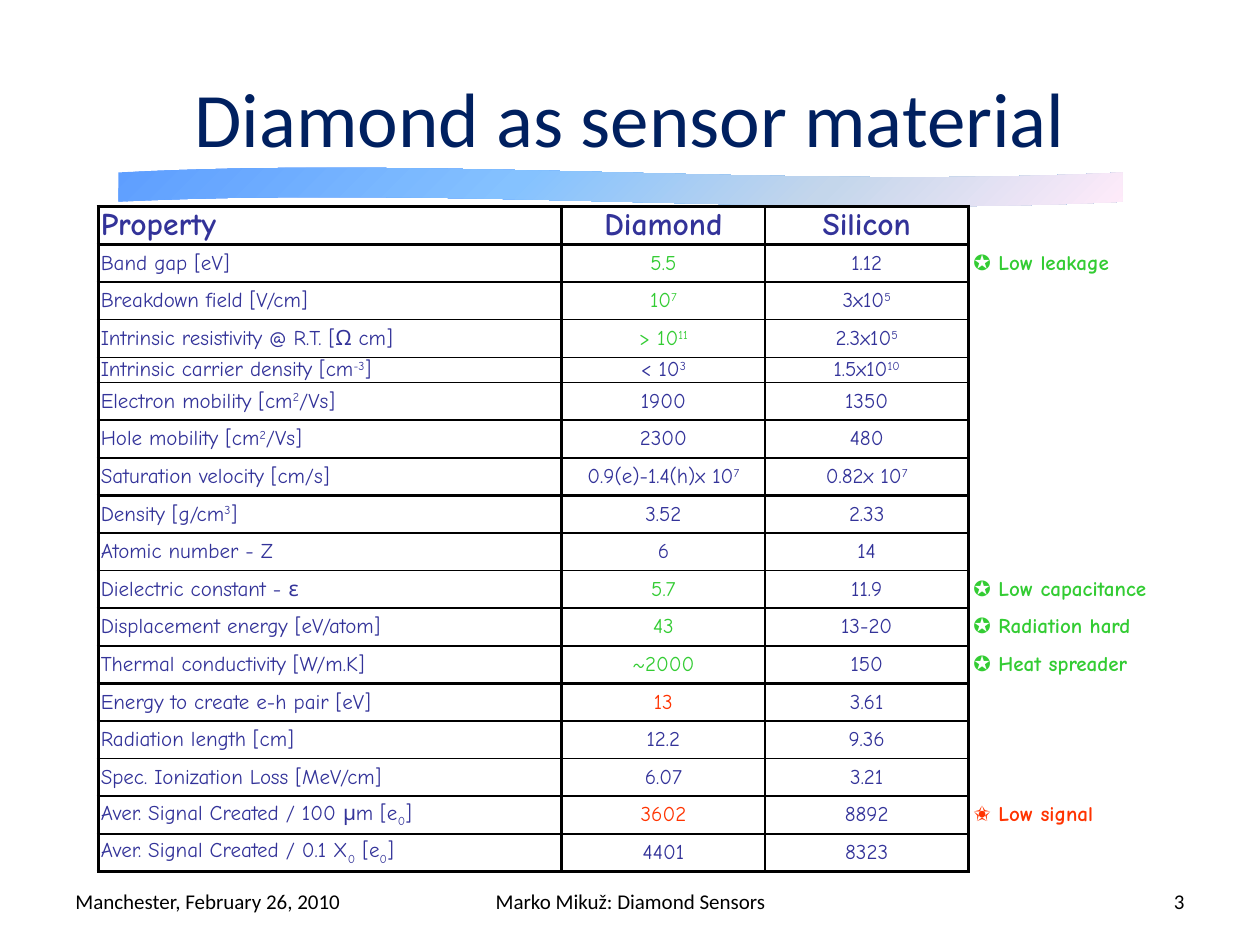
from dataclasses import dataclass

from lxml.etree import SubElement
from pptx import Presentation
from pptx.dml.color import RGBColor
from pptx.enum.shapes import MSO_SHAPE as Shape
from pptx.enum.text import MSO_ANCHOR as Anchor, PP_ALIGN as Align
from pptx.oxml import parse_xml
from pptx.oxml.ns import nsdecls, qn
from pptx.util import Inches, Pt


@dataclass(frozen=True)
class Theme:
    """Fonts, colours and type sizes of the slide."""
    font: str = "Calibri"
    table_font: str = "Comic Neue"
    title: str = "002060"
    footer: str = "000000"
    line: str = "000000"
    ink: str = "333399"
    good: str = "33CC33"
    bad: str = "FF3300"
    title_size: int = 44
    header_size: int = 18
    body_size: int = 12
    thick: float = 2.25
    thin: float = 1
    wave: tuple = ((0, "5E9EFF"), (40, "85C2FF"), (70, "C4D6EB"), (100, "FFEBFA"))


T = Theme()
WIDTH, HEIGHT = Inches(10), Inches(7.5)
NO_STYLE = "{2D5ABB26-0587-4C30-8999-92F81FD0307C}"
BASELINES = {"^": "30000", "_": "-25000"}

COLUMN_WEIGHTS = (2.28, 1, 1, 1)
SHORT_ROW, SHORT_WEIGHT = 4, 0.67
THICK_ROW_EDGES = (0, 1, 8, 13, 18)
THIN_COLUMN_EDGE = 2
NOTE_COLUMN = 3
CELL_INSETS = (0.02, 0, 0, 0.04)

ROWS = (
    ("Property", "Diamond", "Silicon", T.ink, ""),
    ("Band gap [eV]", "5.5", "1.12", T.good, "✪ Low leakage"),
    ("Breakdown field [V/cm]", "10|^7", "3x10|^5", T.good, ""),
    ("Intrinsic resistivity @ R.T. [Ω cm]", "> 10|^11", "2.3x10|^5", T.good, ""),
    ("Intrinsic carrier density [cm|^-3|]", "< 10|^3", "1.5x10|^10", T.ink, ""),
    ("Electron mobility [cm|^2|/Vs]", "1900", "1350", T.ink, ""),
    ("Hole mobility [cm|^2|/Vs]", "2300", "480", T.ink, ""),
    ("Saturation velocity [cm/s]", "0.9(e)-1.4(h)x 10|^7", "0.82x 10|^7", T.ink, ""),
    ("Density [g/cm|^3|]", "3.52", "2.33", T.ink, ""),
    ("Atomic number - Z", "6", "14", T.ink, ""),
    ("Dielectric constant - ε", "5.7", "11.9", T.good, "✪ Low capacitance"),
    ("Displacement energy [eV/atom]", "43", "13-20", T.good, "✪ Radiation hard"),
    ("Thermal conductivity [W/m.K]", "~2000", "150", T.good, "✪ Heat spreader"),
    ("Energy to create e-h pair [eV]", "13", "3.61", T.bad, ""),
    ("Radiation length [cm]", "12.2", "9.36", T.ink, ""),
    ("Spec. Ionization Loss [MeV/cm]", "6.07", "3.21", T.ink, ""),
    ("Aver. Signal Created / 100 μm [e|_0|]", "3602", "8892", T.bad, "✬ Low signal"),
    ("Aver. Signal Created / 0.1 X|_0| [e|_0|]", "4401", "8323", T.ink, ""),
)


def box(x, y, w, h):
    """Turn percentages of the slide into left, top, width and height."""
    return (int(WIDTH * x / 100), int(HEIGHT * y / 100),
            int(WIDTH * w / 100), int(HEIGHT * h / 100))


def style_run(r, font, size, color, bold=False):
    """Format one run."""
    r.font.name, r.font.size, r.font.bold = font, Pt(size), bold
    r.font.color.rgb = RGBColor.from_string(color)


def write(tf, text, align, size, color):
    """Set one plain line, centred vertically."""
    tf.text = text
    tf.word_wrap = True
    tf.vertical_anchor = Anchor.MIDDLE
    p = tf.paragraphs[0]
    p.alignment = align
    style_run(p.runs[0], T.font, size, color)


def add_title(s, text):
    """Place and fill the title."""
    sp = s.shapes.title
    sp.left, sp.top, sp.width, sp.height = box(5, 4, 90, 16.67)
    write(sp.text_frame, text, Align.CENTER, T.title_size, T.title)


def add_footer(s, text, x, w, align):
    """Add one footer text."""
    sp = s.shapes.add_textbox(*box(x, 92.67, w, 5.33))
    write(sp.text_frame, text, align, T.body_size, T.footer)


def add_wave(s):
    """Add the gradient wave behind everything else."""
    sp = s.shapes.add_shape(Shape.WAVE, *box(9.4, 17.73, 79.7, 4.13))
    sp.shadow.inherit = False
    sp.line.fill.background()
    stops = "".join(f'<a:gs pos="{pos * 1000}"><a:srgbClr val="{color}"/></a:gs>'
                    for pos, color in T.wave)
    sp.fill.background()
    no_fill = sp._element.spPr.find(qn("a:noFill"))
    no_fill.getparent().replace(no_fill, parse_xml(
        f'<a:gradFill {nsdecls("a")} rotWithShape="1"><a:gsLst>{stops}</a:gsLst>'
        '<a:lin ang="2700000" scaled="0"/></a:gradFill>'))
    s.shapes._spTree.insert(2, sp._element)


def set_border(cell, index, side, width):
    """Draw one edge of a cell."""
    cell._tc.get_or_add_tcPr().insert(index, parse_xml(
        f'<a:ln{side} {nsdecls("a")} w="{int(Pt(width))}"><a:solidFill>'
        f'<a:srgbClr val="{T.line}"/></a:solidFill></a:ln{side}>'))


def frame_cell(cell, row, col):
    """Give a cell the edges of the table's grid."""
    def col_edge(edge):
        return T.thin if edge == THIN_COLUMN_EDGE else T.thick

    def row_edge(edge):
        return T.thick if edge in THICK_ROW_EDGES else T.thin

    edges = [("L", col_edge(col))]
    if col != NOTE_COLUMN:
        edges += [("R", col_edge(col + 1)), ("T", row_edge(row)), ("B", row_edge(row + 1))]
    for i, (side, width) in enumerate(edges):
        set_border(cell, i, side, width)


def fill_cell(cell, text, col, size, color, bold):
    """Write a cell; | parts the runs, ^ raises and _ lowers one."""
    cell.fill.background()
    cell.vertical_anchor = Anchor.MIDDLE
    cell.margin_left = Inches(CELL_INSETS[col])
    cell.margin_right = cell.margin_top = cell.margin_bottom = 0
    p = cell.text_frame.paragraphs[0]
    p.alignment = Align.CENTER if col in (1, 2) else Align.LEFT
    if not text:
        SubElement(p._p, qn("a:endParaRPr")).set("sz", str(T.body_size * 100))
        return
    for part in text.split("|"):
        r = p.add_run()
        r.text = part.lstrip("^_")
        style_run(r, T.table_font, size, color, bold)
        if part[0] in BASELINES:
            r.font._element.set("baseline", BASELINES[part[0]])


def add_property_table(s):
    """Add the comparison of diamond and silicon with its remarks."""
    gf = s.shapes.add_table(len(ROWS), len(COLUMN_WEIGHTS), *box(7.8, 21.87, 85.2, 70.4))
    width, height = gf.width, gf.height
    table = gf.table
    table.first_row = table.horz_banding = False
    table._tbl.tblPr.find(qn("a:tableStyleId")).text = NO_STYLE
    for column, weight in zip(table.columns, COLUMN_WEIGHTS):
        column.width = int(width * weight / sum(COLUMN_WEIGHTS))
    unit = height / (len(ROWS) - 1 + SHORT_WEIGHT)
    for i, (name, diamond, silicon, color, note) in enumerate(ROWS):
        table.rows[i].height = int(unit * (SHORT_WEIGHT if i == SHORT_ROW else 1))
        size = T.body_size if i else T.header_size
        colors = (T.ink, color, T.ink, color)
        for j, text in enumerate((name, diamond, silicon, note)):
            cell = table.cell(i, j)
            fill_cell(cell, text, j, size, colors[j], i == 0 or j == NOTE_COLUMN)
            frame_cell(cell, i, j)


def main():
    """Build the slide."""
    prs = Presentation()
    prs.slide_width, prs.slide_height = WIDTH, HEIGHT
    s = prs.slides.add_slide(prs.slide_layouts[5])
    add_title(s, "Diamond as sensor material")
    add_wave(s)
    add_footer(s, "Manchester, February 26, 2010", 5, 23.3, Align.LEFT)
    add_footer(s, "Marko Mikuž: Diamond Sensors", 34.2, 31.7, Align.CENTER)
    add_footer(s, "3", 71.7, 23.3, Align.RIGHT)
    add_property_table(s)
    prs.save("out.pptx")


if __name__ == "__main__":
    main()
